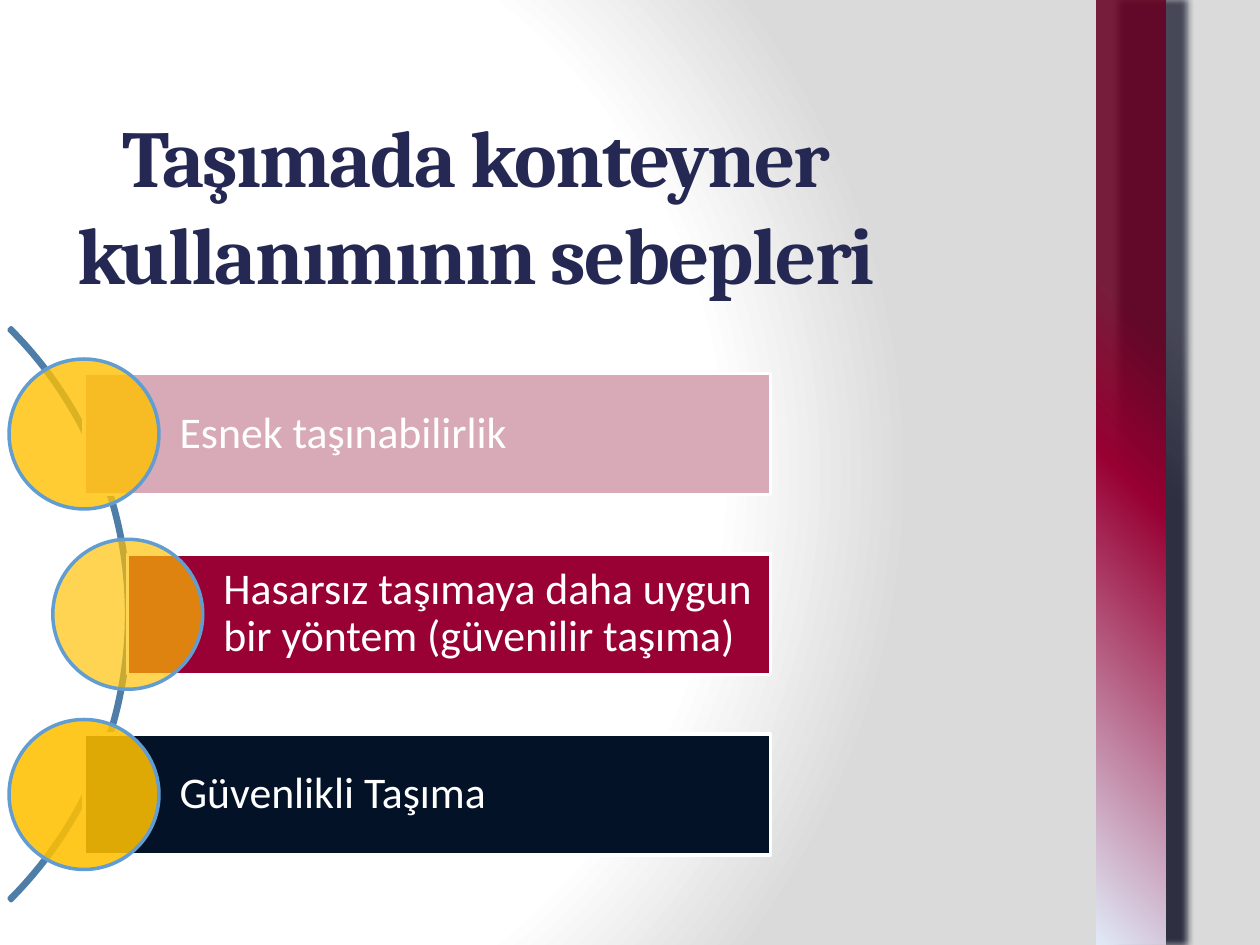
from lxml import etree
from pptx import Presentation
from pptx.dml.color import RGBColor
from pptx.enum.shapes import MSO_SHAPE
from pptx.enum.text import MSO_ANCHOR, PP_ALIGN
from pptx.oxml import parse_xml
from pptx.oxml.ns import qn
from pptx.util import Pt

RECTANGLE, OVAL, ARC = MSO_SHAPE.RECTANGLE, MSO_SHAPE.OVAL, MSO_SHAPE.BLOCK_ARC
MIDDLE = MSO_ANCHOR.MIDDLE
LEFT, CENTER = PP_ALIGN.LEFT, PP_ALIGN.CENTER
DRAWING = "http://schemas.openxmlformats.org/drawingml/2006/main"


def color(hex_code):
    return RGBColor.from_string(hex_code)


def color_xml(hex_code, opacity=100):
    return (f'<a:srgbClr val="{hex_code}">'
            f'<a:alpha val="{opacity * 1000}"/></a:srgbClr>')


def gradient(stops, direction):
    """Gradient fill from (position, colour, opacity) stops."""
    marks = "".join(f'<a:gs pos="{position * 1000}">{color_xml(code, opacity)}</a:gs>'
                    for position, code, opacity in stops)
    return parse_xml(f'<a:gradFill xmlns:a="{DRAWING}" rotWithShape="1">'
                     f'<a:gsLst>{marks}</a:gsLst>{direction}</a:gradFill>')


def write(frame, text, font="Calibri", size=25, ink="FFFFFF", bold=False,
          align=LEFT, spacing=1.0, tracking=0, margins=(7.2, 3.6, 7.2, 3.6)):
    frame.word_wrap = True
    frame.vertical_anchor = MIDDLE
    (frame.margin_left, frame.margin_top,
     frame.margin_right, frame.margin_bottom) = map(Pt, margins)
    para = frame.paragraphs[0]
    para.alignment, para.line_spacing = align, spacing
    span = para.add_run()
    span.text = text
    span.font.name, span.font.size, span.font.bold = font, Pt(size), bold
    span.font.color.rgb = color(ink)
    if tracking:
        span.font._element.set("spc", str(tracking * 100))


class SlideBuilder:
    navy, white, gold = "242852", "FFFFFF", "FFC000"
    arc_blue, ring_blue = "4E7EA7", "629DD1"

    def __init__(self, page):
        self.page = page

    def background(self, fill):
        self.page.background.fill.solid()
        solid = next(self.page._element.iter(qn("a:solidFill")))
        solid.getparent().replace(solid, fill)

    def shape(self, kind, left, top, width, height, fill=None, line=None, opacity=100):
        box = self.page.shapes.add_shape(kind, Pt(left), Pt(top), Pt(width), Pt(height))
        box.shadow.inherit = False
        if fill:
            box.fill.solid()
            box.fill.fore_color.rgb = color(fill)
            if opacity < 100:
                code = box._element.spPr.find(qn("a:solidFill"))[0]
                etree.SubElement(code, qn("a:alpha")).set("val", str(opacity * 1000))
        else:
            box.fill.background()
        if line:
            box.line.color.rgb = color(line)
            box.line.width = Pt(2)
        else:
            box.line.fill.background()
        return box

    def side_band(self, left, width, height, fill):
        band = self.shape(RECTANGLE, left, 0, width, height, self.navy)
        properties = band._element.spPr
        properties.replace(properties.find(qn("a:solidFill")), fill)
        shadow = parse_xml(
            f'<a:effectLst xmlns:a="{DRAWING}"><a:outerShdw blurRad="{Pt(4)}" '
            f'dist="{Pt(12)}" dir="{359 * 60000}" algn="tl" rotWithShape="0">'
            f'{color_xml("121429", 85)}</a:outerShdw></a:effectLst>')
        properties.replace(properties.find(qn("a:effectLst")), shadow)

    def title(self, left, top, width, height, text):
        box = self.page.shapes.add_textbox(Pt(left), Pt(top), Pt(width), Pt(height))
        write(box.text_frame, text, font="Cambria", size=46, ink=self.navy,
              bold=True, align=CENTER, tracking=-1)

    def arc(self, left, top, diameter):
        curve = self.shape(ARC, left, top, diameter, diameter, line=self.arc_blue)
        for index, value in enumerate((189, 27, 0.004)):
            curve.adjustments[index] = value

    def reason(self, left, middle, text, fill, opacity):
        """Bar up to a shared right edge, with a circle centred on its left edge."""
        right, height, diameter = 440.4, 69, 85.7
        bar = self.shape(RECTANGLE, left, middle - height / 2, right - left, height,
                         fill, self.white)
        write(bar.text_frame, text, spacing=0.9, margins=(54.7, 5, 5, 5))
        self.shape(OVAL, left - diameter / 2, middle - diameter / 2,
                   diameter, diameter, self.gold, self.ring_blue, opacity)


def main():
    deck = Presentation()
    deck.slide_width, deck.slide_height = Pt(720), Pt(540)
    builder = SlideBuilder(deck.slides.add_slide(deck.slide_layouts[6]))

    # Background and side band
    builder.background(gradient(
        [(0, "FFFFFF", 100), (75, "FFFFFF", 100), (100, "DADADA", 100)],
        '<a:path path="circle">'
        '<a:fillToRect l="20000" t="50000" r="100000" b="50000"/></a:path>'))
    builder.side_band(626.4, 39.6, 540, gradient(
        [(34, "680023", 86), (51, "990033", 100), (100, "E2ECFA", 100)],
        f'<a:lin ang="{135 * 60000}" scaled="0"/>'))

    # Title
    builder.title(31, 71.3, 481.7, 90, "Taşımada konteyner kullanımının sebepleri")

    # Reasons along the arc
    builder.arc(-388.8, 119.5, 463)
    reasons = [
        (48, "Esnek taşınabilirlik", "D8AAB8", 80),
        (73, "Hasarsız taşımaya daha uygun bir yöntem (güvenilir taşıma)", "990033", 68),
        (48, "Güvenlikli Taşıma", "031227", 87),
    ]
    for index, (left, text, fill, opacity) in enumerate(reasons):
        builder.reason(left, 248 + 103 * index, text, fill, opacity)

    deck.save("out.pptx")


if __name__ == "__main__":
    main()
